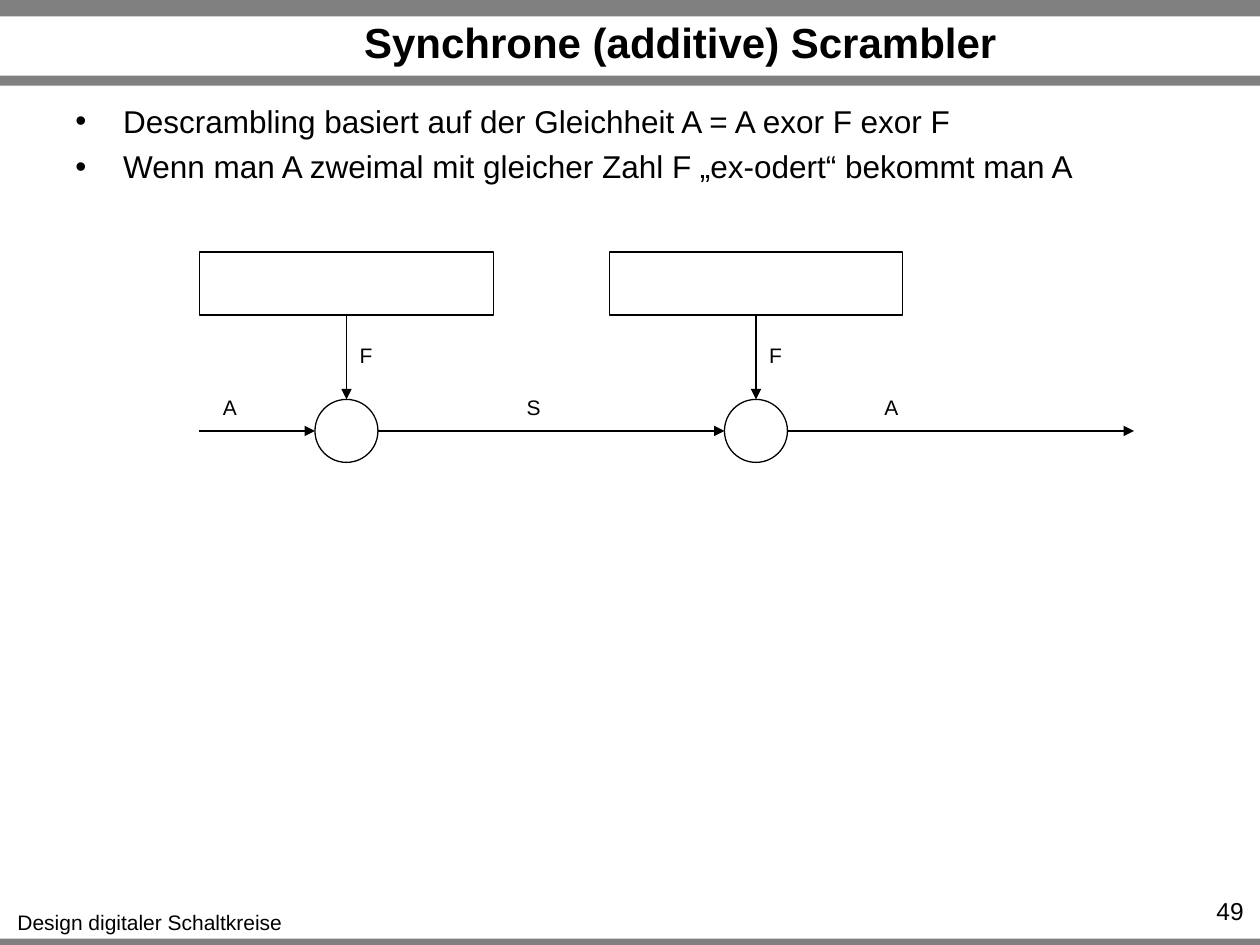
"""Build the slide on synchronous (additive) scramblers."""
from typing import NamedTuple

from lxml.etree import SubElement
from pptx import Presentation
from pptx.dml.color import RGBColor
from pptx.enum.shapes import MSO_CONNECTOR, MSO_SHAPE
from pptx.enum.text import MSO_ANCHOR, PP_ALIGN
from pptx.oxml.ns import qn
from pptx.util import Inches, Pt

COLORS = {"bar": "808080", "ink": "000000"}
FONT = "Arial"
WIRE_Y = 3.42
REGISTER_TOP, REGISTER_W, REGISTER_H = 2, 2.33, 0.5
XOR_SIZE = 0.5
XOR_TOP = WIRE_Y - XOR_SIZE / 2


class Bar(NamedTuple):
    top: float
    height: float


class Label(NamedTuple):
    text: str
    left: float
    top: float
    width: float = 0.31
    height: float = 0.3


class Wire(NamedTuple):
    x1: float
    y1: float
    x2: float
    y2: float


STAGE_CENTERS = [2.75, 6]
BARS = [Bar(7.45, 0.05), Bar(0, 0.13), Bar(0.6, 0.08)]
WIRES = [
    Wire(1.58, WIRE_Y, 2.5, WIRE_Y),
    Wire(3, WIRE_Y, 5.75, WIRE_Y),
    Wire(6.25, WIRE_Y, 9, WIRE_Y),
]
LABELS = [
    Label("Design digitaler Schaltkreise", 0.03, 7.17, 2.32),
    Label("A", 1.67, 3.08),
    Label("S", 4.08, 3.08),
    Label("A", 6.92, 3.08),
    *(Label("F", x, 2.67) for x in STAGE_CENTERS),
]
BULLETS = [
    "Descrambling basiert auf der Gleichheit A = A exor F exor F",
    "Wenn man A zweimal mit gleicher Zahl F „ex-odert“ bekommt man A",
]


def rgb(name: str) -> RGBColor:
    return RGBColor.from_string(COLORS[name])


def format_text(p, size: float, align=PP_ALIGN.LEFT, bold: bool = False) -> None:
    p.alignment = align
    for r in p.runs:
        r.font.name = FONT
        r.font.size = Pt(size)
        r.font.bold = bold
        r.font.color.rgb = rgb("ink")


def add_bar(slide, bar: Bar) -> None:
    s = slide.shapes.add_shape(
        MSO_SHAPE.RECTANGLE, 0, Inches(bar.top), Inches(10), Inches(bar.height))
    s.shadow.inherit = False
    s.fill.solid()
    s.fill.fore_color.rgb = rgb("bar")
    s.line.fill.background()


def add_outline(slide, kind, center: float, top: float, width: float, height: float) -> None:
    s = slide.shapes.add_shape(
        kind, Inches(center - width / 2), Inches(top), Inches(width), Inches(height))
    s.shadow.inherit = False
    s.fill.background()
    s.line.color.rgb = rgb("ink")
    s.line.width = Pt(0.75)


def add_wire(slide, wire: Wire) -> None:
    c = slide.shapes.add_connector(MSO_CONNECTOR.STRAIGHT, *map(Inches, wire))
    c.line.color.rgb = rgb("ink")
    c.line.width = Pt(0.75)
    SubElement(c.line._get_or_add_ln(), qn("a:tailEnd"), type="triangle")
    SubElement(c._element.spPr, qn("a:effectLst"))


def add_stage(slide, center: float) -> None:
    add_outline(slide, MSO_SHAPE.OVAL, center, XOR_TOP, XOR_SIZE, XOR_SIZE)
    add_wire(slide, Wire(center, REGISTER_TOP + REGISTER_H, center, XOR_TOP))
    add_outline(slide, MSO_SHAPE.RECTANGLE, center, REGISTER_TOP, REGISTER_W, REGISTER_H)


def add_label(slide, label: Label, size: float = 12, align=PP_ALIGN.CENTER,
              wrap: bool = False) -> None:
    tf = slide.shapes.add_textbox(*map(Inches, label[1:])).text_frame
    tf.word_wrap = wrap
    tf.text = label.text
    format_text(tf.paragraphs[0], size, align)


def add_bullets(slide, items: list[str]) -> None:
    tf = slide.shapes.add_textbox(
        Inches(0.5), Inches(0.76), Inches(9), Inches(0.74)).text_frame
    tf.word_wrap = True
    tf.text = "\n".join(items)
    for i, p in enumerate(tf.paragraphs):
        pPr = p._p.get_or_add_pPr()
        pPr.set("marL", str(Inches(0.38)))
        pPr.set("indent", str(-Inches(0.38)))
        SubElement(pPr, qn("a:buFont"), typeface=FONT)
        SubElement(pPr, qn("a:buChar"), char="•")
        if i:
            p.space_before = Pt(4.4)
        format_text(p, 18)


def set_title(slide, text: str) -> None:
    title = slide.shapes.title
    title.left, title.top = Inches(1.3), Inches(0.14)
    title.width, title.height = Inches(8.2), Inches(0.38)
    tf = title.text_frame
    tf.text = text
    tf.vertical_anchor = MSO_ANCHOR.MIDDLE
    format_text(tf.paragraphs[0], 24, PP_ALIGN.CENTER, bold=True)


def main() -> None:
    prs = Presentation()
    prs.slide_width, prs.slide_height = Inches(10), Inches(7.5)
    slide = prs.slides.add_slide(prs.slide_layouts[5])
    for bar in BARS:
        add_bar(slide, bar)
    set_title(slide, "Synchrone (additive) Scrambler")
    add_bullets(slide, BULLETS)
    for center in STAGE_CENTERS:
        add_stage(slide, center)
    for wire in WIRES:
        add_wire(slide, wire)
    for label in LABELS:
        add_label(slide, label)
    add_label(slide, Label("49", 9.1, 7.06, 0.87, 0.24), 14, PP_ALIGN.RIGHT, wrap=True)
    prs.save("out.pptx")


if __name__ == "__main__":
    main()
